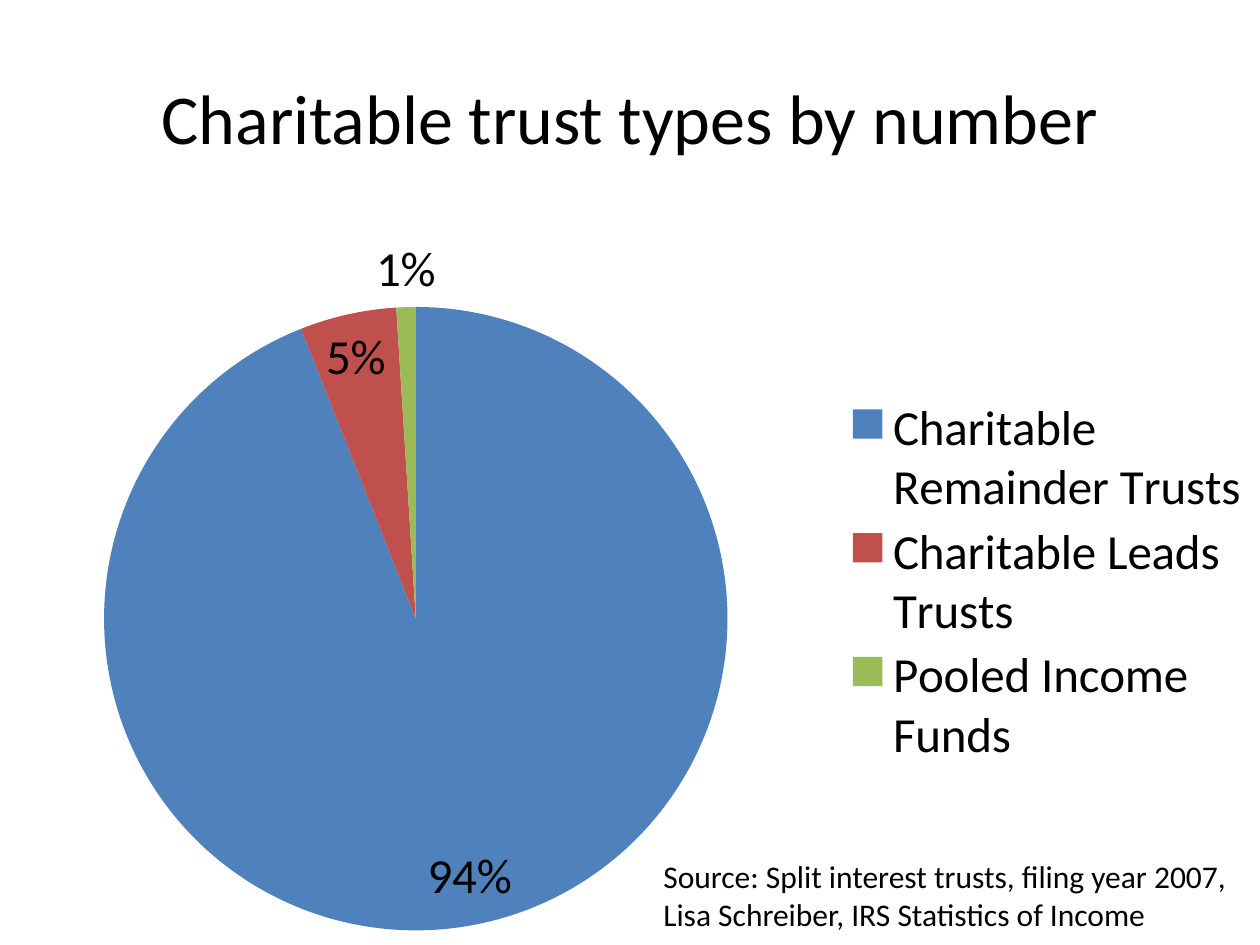
from lxml.etree import SubElement
from pptx import Presentation
from pptx.chart.data import CategoryChartData
from pptx.dml.color import RGBColor
from pptx.enum.chart import XL_CHART_TYPE as ChartType
from pptx.enum.chart import XL_LABEL_POSITION as LabelPosition
from pptx.enum.chart import XL_LEGEND_POSITION as LegendPosition
from pptx.enum.text import MSO_ANCHOR as Anchor
from pptx.enum.text import PP_ALIGN as Align
from pptx.oxml.ns import qn
from pptx.util import Pt

EMU_PER_PX = 914400 // 126
FONT = "Calibri"
BLACK = "000000"
TRUSTS = [
    ("Charitable Remainder Trusts", 94, "4F81BD"),
    ("Charitable Leads Trusts", 5, "C0504D"),
    ("Pooled Income Funds", 1, "9BBB59"),
]


def px(*lengths):
    return [length * EMU_PER_PX for length in lengths]


def color(code):
    return RGBColor.from_string(code)


def set_font(font, size):
    font.name = FONT
    font.size = Pt(size)
    font.color.rgb = color(BLACK)


def add_text(page, place, text, size, align=Align.LEFT, anchor=Anchor.TOP):
    frame = page.shapes.add_textbox(*px(*place)).text_frame
    frame.word_wrap = True
    frame.vertical_anchor = anchor
    para = frame.paragraphs[0]
    para.text = text
    para.alignment = align
    set_font(para.font, size)


def set_layout(parent, index, x, y, w, h, inner=False):
    """Place a chart part by fractions of the chart's size."""
    for old in parent.findall(qn("c:layout")):
        parent.remove(old)
    layout = SubElement(parent, qn("c:layout"))
    parent.insert(index, layout)
    manual = SubElement(layout, qn("c:manualLayout"))
    settings = [("layoutTarget", "inner")] if inner else []
    settings += [("xMode", "edge"), ("yMode", "edge")]
    settings += [("x", x), ("y", y), ("w", w), ("h", h)]
    for tag, value in settings:
        SubElement(manual, qn(f"c:{tag}")).set("val", str(value))


def add_pie(page, place, rows, size):
    data = CategoryChartData()
    data.categories = [name for name, _, _ in rows]
    data.add_series("Series 1", [value for _, value, _ in rows])
    chart = page.shapes.add_chart(ChartType.PIE, *px(*place), data).chart
    chart.has_title = False
    set_font(chart.font, size)

    # Slices
    plot = chart.plots[0]
    plot.vary_by_categories = True
    for index, (_, _, code) in enumerate(rows):
        fill = plot.series[0].points[index].format.fill
        fill.solid()
        fill.fore_color.rgb = color(code)

    # Percent labels
    plot.has_data_labels = True
    labels = plot.data_labels
    labels.show_percentage = True
    labels.show_value = False
    labels.number_format = "0%"
    labels.number_format_is_linked = False
    labels.position = LabelPosition.BEST_FIT
    set_font(labels.font, size)

    # Legend
    chart.has_legend = True
    legend = chart.legend
    legend.position = LegendPosition.RIGHT
    legend.include_in_layout = False
    set_font(legend.font, size)

    # Positions of pie and legend
    plot_area = chart.element.find(".//" + qn("c:plotArea"))
    set_layout(plot_area, 0, 0.08, 0.12, 0.5, 0.86, inner=True)
    set_layout(legend._element, 1, 0.67, 0.24, 0.33, 0.52)


def main():
    deck = Presentation()
    deck.slide_width, deck.slide_height = px(1260, 945)
    page = deck.slides.add_slide(deck.slide_layouts[6])

    add_text(page, (63, 38, 1134, 157), "Charitable trust types by number",
             40, Align.CENTER, Anchor.MIDDLE)
    add_pie(page, (0, 220, 1260, 725), TRUSTS, 28)
    add_text(page, (651, 851, 609, 89),
             "Source: Split interest trusts, filing year 2007, "
             "Lisa Schreiber, IRS Statistics of Income", 18)

    deck.save("out.pptx")


if __name__ == "__main__":
    main()
